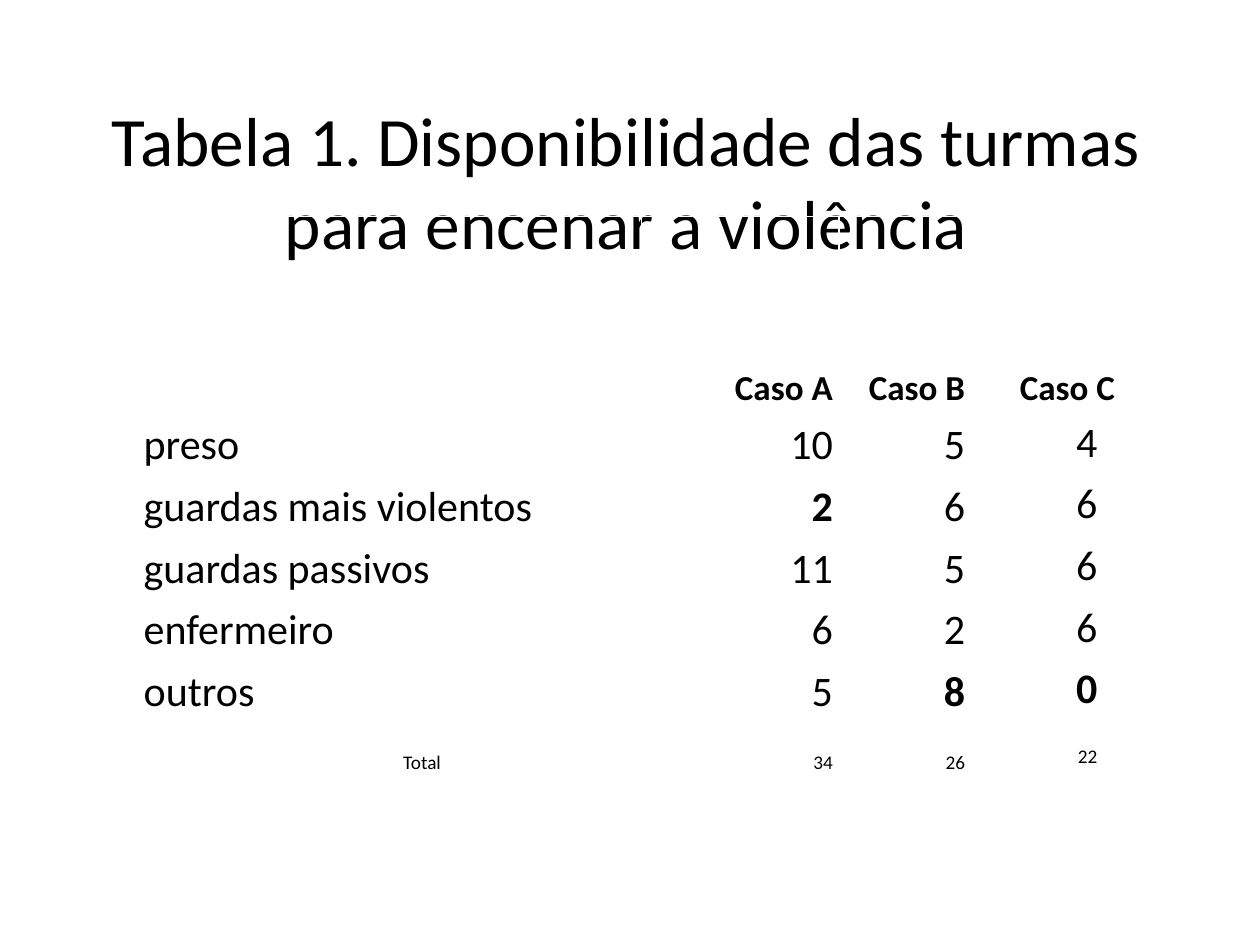
from dataclasses import dataclass
from pptx import Presentation
from pptx.dml.color import RGBColor
from pptx.enum.text import MSO_ANCHOR as Anchor, PP_ALIGN as Align
from pptx.util import Inches, Pt

TITLE = "Tabela 1. Disponibilidade das turmas para encenar a violência"
CASES = ["Caso A", "Caso B", "Caso C"]
ROLES = [
    ("preso", [10, 5, 4]),
    ("guardas mais violentos", [2, 6, 6]),
    ("guardas passivos", [11, 5, 6]),
    ("enfermeiro", [6, 2, 6]),
    ("outros", [5, 8, 0]),
]
TOTAL = ("Total", [34, 26, 22])
HIGHLIGHTS = {("guardas mais violentos", 0), ("outros", 1), ("outros", 2)}

COLUMN_WIDTHS = [4, 0.52, 1.05, 1.05, 1.05, 0.14]
ROW_HEIGHTS = [1.53] + [0.49] * len(ROLES) + [0.45]
FIRST_CASE = 2
LAST_CASE = FIRST_CASE + len(CASES) - 1


@dataclass(frozen=True)
class Theme:
    font: str = "Calibri"
    ink: RGBColor = RGBColor(0, 0, 0)
    title: float = 39.6
    header: float = 20
    body: float = 24
    total: float = 11
    spacing: float = 1.15


THEME = Theme()


def write(frame, text, size, align, bold=False):
    paragraph = frame.paragraphs[0]
    paragraph.alignment = align
    run = paragraph.add_run()
    run.text = str(text)
    run.font.name = THEME.font
    run.font.size = Pt(size)
    run.font.bold = bold
    run.font.color.rgb = THEME.ink
    return paragraph


def fill_cell(cell, text, size, align=Align.RIGHT, bold=False, anchor=Anchor.BOTTOM):
    cell.vertical_anchor = anchor
    write(cell.text_frame, text, size, align, bold).line_spacing = THEME.spacing


def add_title(slide):
    heading = slide.shapes.add_textbox(Inches(0.47), Inches(0.76), Inches(9), Inches(1.34))
    frame = heading.text_frame
    frame.word_wrap = True
    frame.vertical_anchor = Anchor.MIDDLE
    frame.margin_top = frame.margin_bottom = 0
    write(frame, TITLE, THEME.title, Align.CENTER)


def add_availability(slide):
    availability = slide.shapes.add_table(
        len(ROW_HEIGHTS), len(COLUMN_WIDTHS), Inches(1.09), Inches(1.72),
        Inches(sum(COLUMN_WIDTHS)), Inches(sum(ROW_HEIGHTS))).table
    availability.first_row = availability.horz_banding = False
    for column, width in zip(availability.columns, COLUMN_WIDTHS):
        column.width = Inches(width)
    for row, height in zip(availability.rows, ROW_HEIGHTS):
        row.height = Inches(height)
    for cell in availability.iter_cells():
        cell.fill.background()
        cell.margin_left = cell.margin_right = Inches(0.05)
        cell.margin_top = cell.margin_bottom = 0

    availability.cell(0, LAST_CASE).merge(availability.cell(0, LAST_CASE + 1))
    for column, case in enumerate(CASES, FIRST_CASE):
        fill_cell(availability.cell(0, column), case, THEME.header, bold=True)

    for row, (label, counts) in enumerate(ROLES + [TOTAL], 1):
        is_total = label == TOTAL[0]
        size = THEME.total if is_total else THEME.body
        label_cell = availability.cell(row, 0)
        label_cell.merge(availability.cell(row, 1))
        fill_cell(label_cell, label, size, Align.CENTER if is_total else Align.LEFT)
        for case, count in enumerate(counts):
            column = FIRST_CASE + case
            raised = column == LAST_CASE and not is_total
            fill_cell(availability.cell(row, column), count, size,
                      bold=(label, case) in HIGHLIGHTS,
                      anchor=Anchor.TOP if raised else Anchor.BOTTOM)
    availability.cell(len(ROLES) + 1, LAST_CASE).margin_bottom = Inches(0.05)


def main():
    deck = Presentation()
    deck.slide_width, deck.slide_height = Inches(10), Inches(7.5)
    slide = deck.slides.add_slide(deck.slide_layouts[6])
    add_title(slide)
    add_availability(slide)
    deck.save("out.pptx")


if __name__ == "__main__":
    main()
